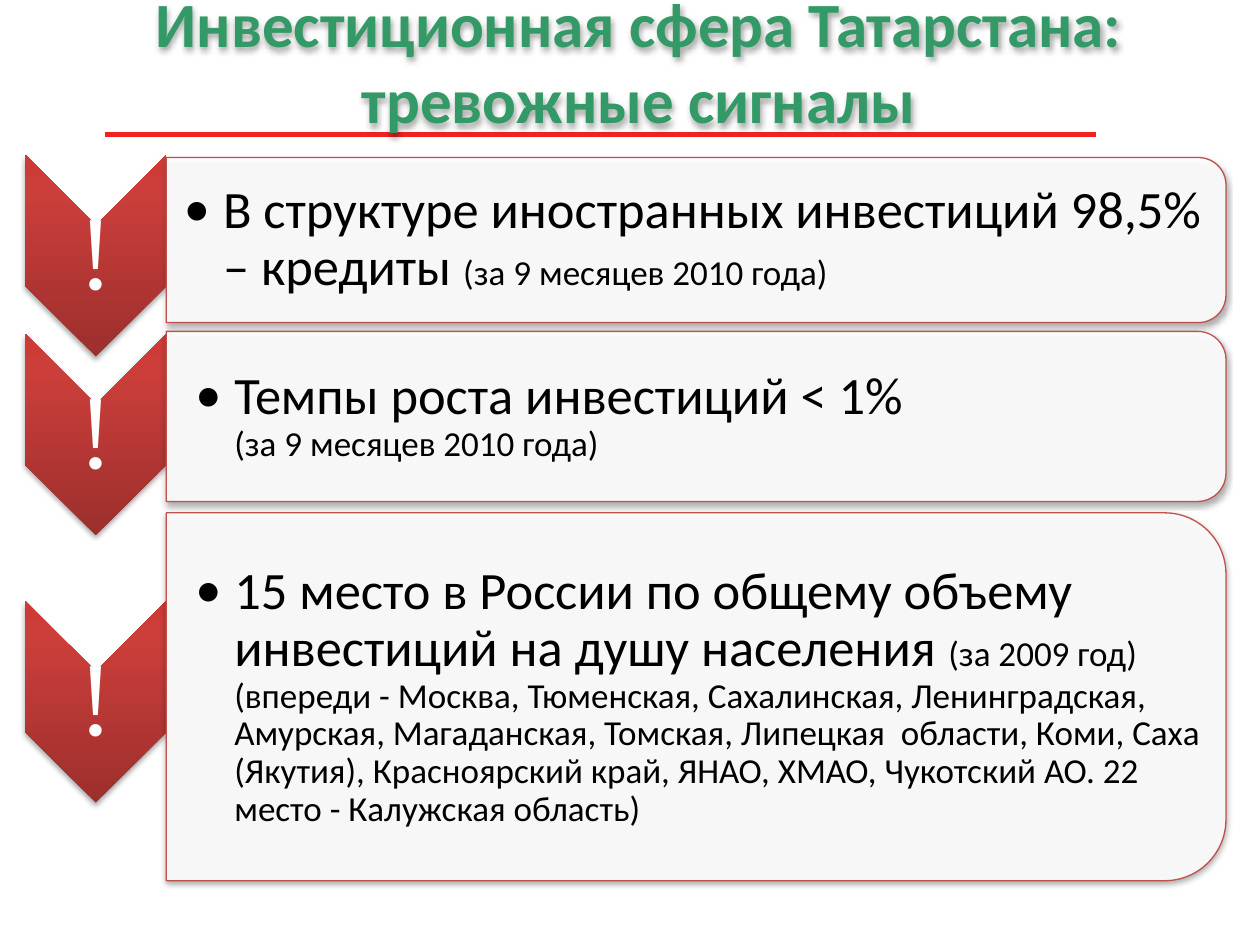
import pptx
import pptx.dml.color
import pptx.enum.shapes
import pptx.enum.text
import pptx.oxml
import pptx.oxml.ns
import pptx.util
from pptx.util import Inches

SHAPES = pptx.enum.shapes.MSO_SHAPE
CENTER = pptx.enum.text.PP_ALIGN.CENTER
NS = pptx.oxml.ns.nsdecls("a")
CHEVRON_STOPS = [(0, "9C2F2D"), (80, "CB3E3A"), (100, "CE3B37")]
CHEVRON_WIDTH, CHEVRON_HEIGHT = 1.12, 1.6
SIGNALS_LEFT, PANEL_WIDTH = 0.2, 8.41
CORNER_INSET = 0.05

SIGNALS = [
    (1.23, 1.25, 1.31, 0.14,
     [("В структуре иностранных инвестиций 98,5% – кредиты ", 30),
      ("(за 9 месяцев 2010 года)", 20)]),
    (2.65, 2.63, 1.35, 0.23,
     [("Темпы роста инвестиций < 1%\v", 30),
      ("(за 9 месяцев 2010 года)", 20)]),
    (4.77, 4.07, 2.92, 0.23,
     [("15 место в России по общему объему инвестиций на душу населения ", 30),
      ("(за 2009 год)\v(впереди - Москва, Тюменская, Сахалинская, Ленинградская, "
       "Амурская, Магаданская, Томская, Липецкая  области, Коми, "
       "Саха (Якутия), Красноярский край, ЯНАО, ХМАО, Чукотский АО. "
       "22 место - Калужская область)", 20)]),
]


def rgb(value):
    return pptx.dml.color.RGBColor.from_string(value)


def xml(markup):
    return pptx.oxml.parse_xml(markup)


def add_shadow(part):
    part._element.spPr.append(xml(
        f'<a:effectLst {NS}><a:outerShdw blurRad="39370" dist="22860" dir="5400000" '
        'rotWithShape="0"><a:srgbClr val="000000"><a:alpha val="35000"/></a:srgbClr>'
        '</a:outerShdw></a:effectLst>'))


def add_turned_shape(slide, kind, left, top, width, height):
    turned = slide.shapes.add_shape(
        kind, Inches(left + (width - height) / 2), Inches(top + (height - width) / 2),
        Inches(height), Inches(width))
    turned.rotation = 90
    return turned


def add_text(slide, left, top, width, height, insets):
    box = slide.shapes.add_textbox(Inches(left), Inches(top), Inches(width), Inches(height))
    frame = box.text_frame
    frame.word_wrap = True
    frame.vertical_anchor = pptx.enum.text.MSO_ANCHOR.MIDDLE
    frame.margin_left, frame.margin_top, frame.margin_right, frame.margin_bottom = map(
        Inches, insets)
    return box


def style(font, name, size, color, bold=False):
    font.name = name
    font.size = pptx.util.Pt(size)
    font.color.rgb = rgb(color)
    font.bold = bold


def add_heading(slide, left, top, width, height):
    rule = slide.shapes.add_connector(
        pptx.enum.shapes.MSO_CONNECTOR.STRAIGHT,
        Inches(0.83), Inches(1.07), Inches(8.7), Inches(1.07))
    rule.line.color.rgb = rgb("F22222")
    rule.line.width = pptx.util.Pt(2.75)
    rule._element.spPr.append(xml(f"<a:effectLst {NS}/>"))

    title = add_text(slide, left, top, width, height, (0.1, 0.05, 0.1, 0.05))
    add_shadow(title)
    title.text_frame.text = "Инвестиционная сфера Татарстана: тревожные сигналы"
    heading = title.text_frame.paragraphs[0]
    heading.alignment = CENTER
    style(heading.runs[0].font, "Calibri", 36, "339966", True)


def add_warning(slide, left, top, width, height):
    chevron = add_turned_shape(slide, SHAPES.CHEVRON, left, top, width, height)
    stops = "".join(f'<a:gs pos="{position * 1000}"><a:srgbClr val="{color}"/></a:gs>'
                    for position, color in CHEVRON_STOPS)
    chevron._element.spPr.prstGeom.addnext(xml(
        f'<a:gradFill {NS} rotWithShape="0"><a:gsLst>{stops}</a:gsLst>'
        '<a:lin ang="16200000" scaled="0"/></a:gradFill>'))
    chevron.line.fill.background()
    add_shadow(chevron)

    label_height = height - 2 * width / 2
    mark = add_text(slide, left, top + (height - label_height) / 2, width, label_height,
                    (0.04,) * 4).text_frame
    mark.text = "!"
    paragraph = mark.paragraphs[0]
    paragraph.alignment = CENTER
    paragraph.line_spacing = 0.9
    style(paragraph.runs[0].font, "Times New Roman", 60, "FFFFFF")


def add_panel(slide, left, top, width, height, indent, pieces):
    panel = add_turned_shape(slide, SHAPES.ROUND_2_SAME_RECTANGLE, left, top, width, height)
    panel.fill.solid()
    panel.fill.fore_color.rgb = rgb("FFFFFF")
    color = panel._element.spPr.find(".//" + pptx.oxml.ns.qn("a:srgbClr"))
    color.append(xml(f'<a:alpha {NS} val="90000"/>'))
    panel.line.color.rgb = rgb("C0504D")
    panel.line.width = pptx.util.Pt(0.75)
    add_shadow(panel)

    inset = CORNER_INSET * height
    body = add_text(slide, left, top + inset, width - inset, height - 2 * inset,
                    (indent, 0.01, 0.01, 0.01)).text_frame
    body.text = "".join(text for text, size in pieces[:0])
    paragraph = body.paragraphs[0]
    properties = paragraph._p.get_or_add_pPr()
    properties.set("marL", str(Inches(0.31)))
    properties.set("indent", str(-Inches(0.31)))
    properties.append(xml(f'<a:buFont {NS} typeface="Calibri"/>'))
    properties.append(xml(f'<a:buChar {NS} char="•"/>'))
    paragraph.line_spacing = 0.9
    for text, size in pieces:
        for number, line in enumerate(text.split("\v")):
            if number:
                paragraph.add_line_break()
            if line:
                run = paragraph.add_run()
                run.text = line
                style(run.font, "Calibri", size, "000000")


def main():
    presentation = pptx.Presentation()
    presentation.slide_width = Inches(10)
    presentation.slide_height = Inches(7.5)
    slide = presentation.slides.add_slide(presentation.slide_layouts[6])
    add_heading(slide, 0.57, -0.19, 9, 1.34)
    for warning_top, panel_top, panel_height, indent, pieces in SIGNALS:
        add_warning(slide, SIGNALS_LEFT, warning_top, CHEVRON_WIDTH, CHEVRON_HEIGHT)
        add_panel(slide, SIGNALS_LEFT + CHEVRON_WIDTH, panel_top, PANEL_WIDTH,
                  panel_height, indent, pieces)
    presentation.save("out.pptx")


if __name__ == "__main__":
    main()
